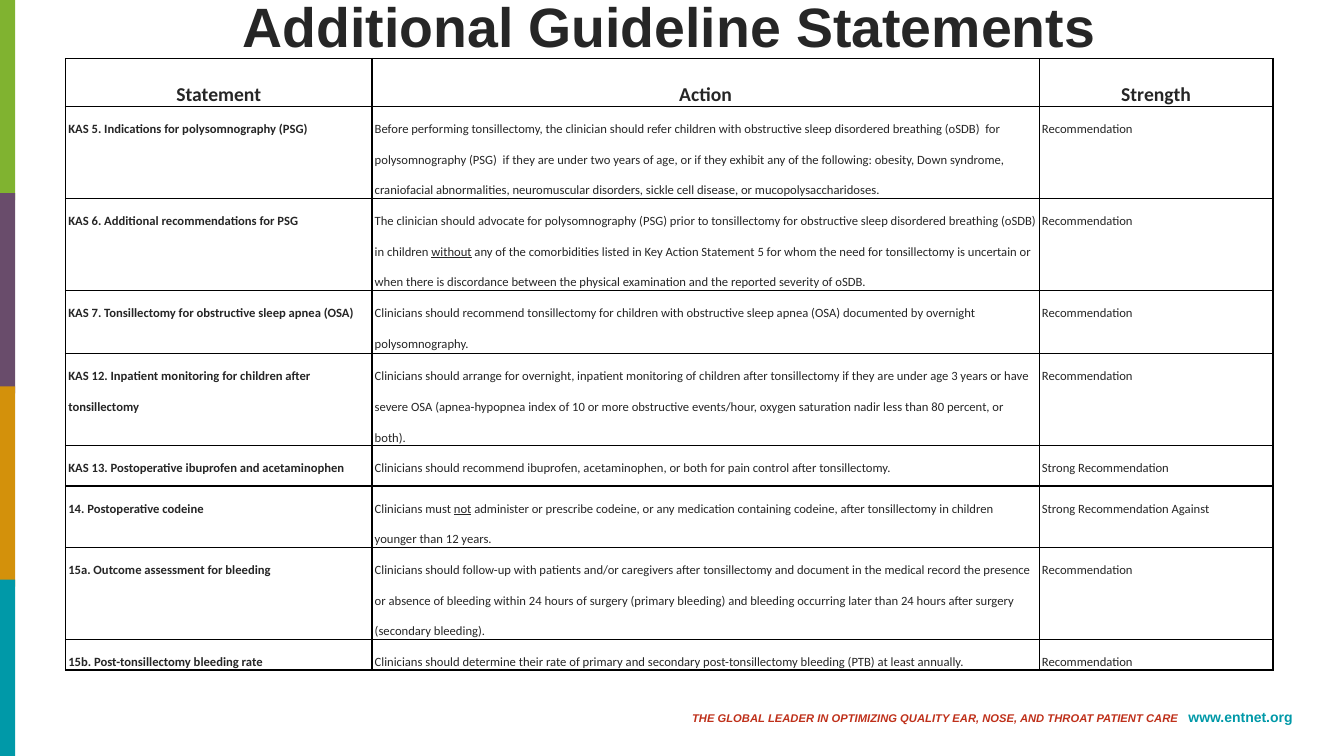
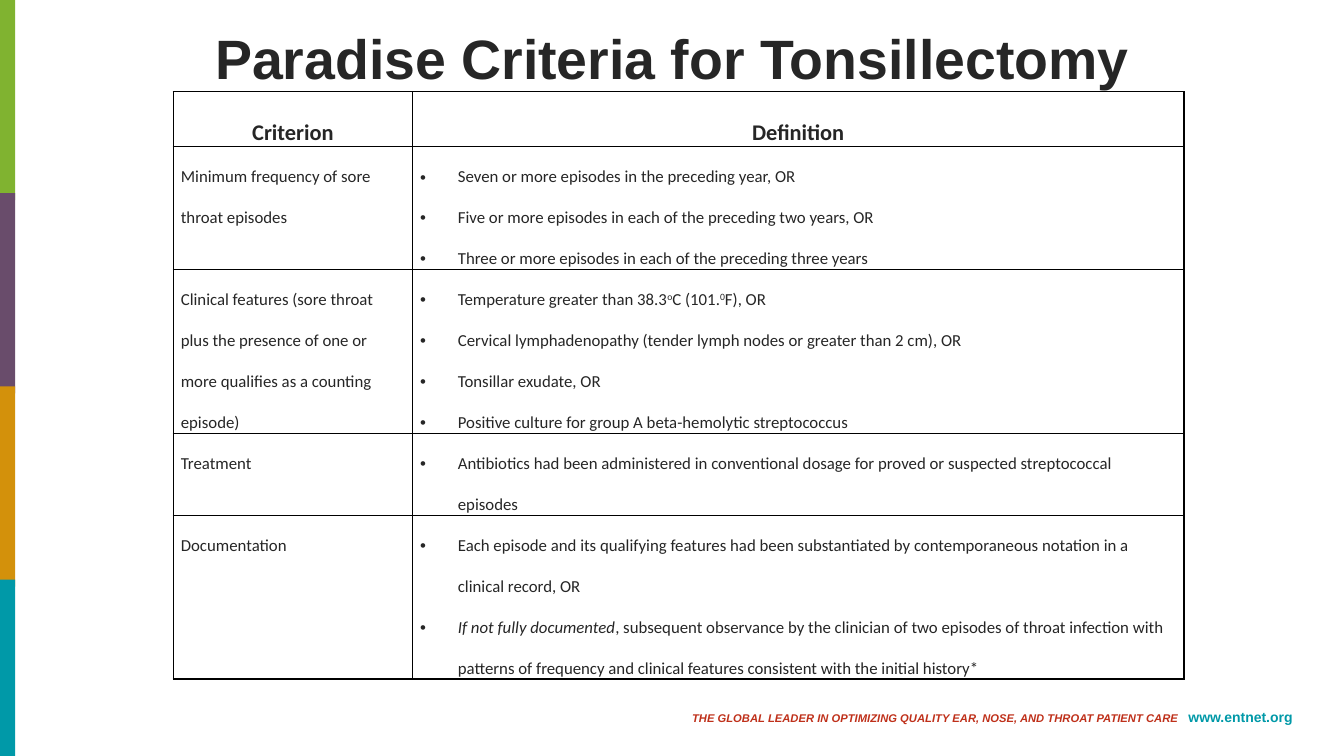
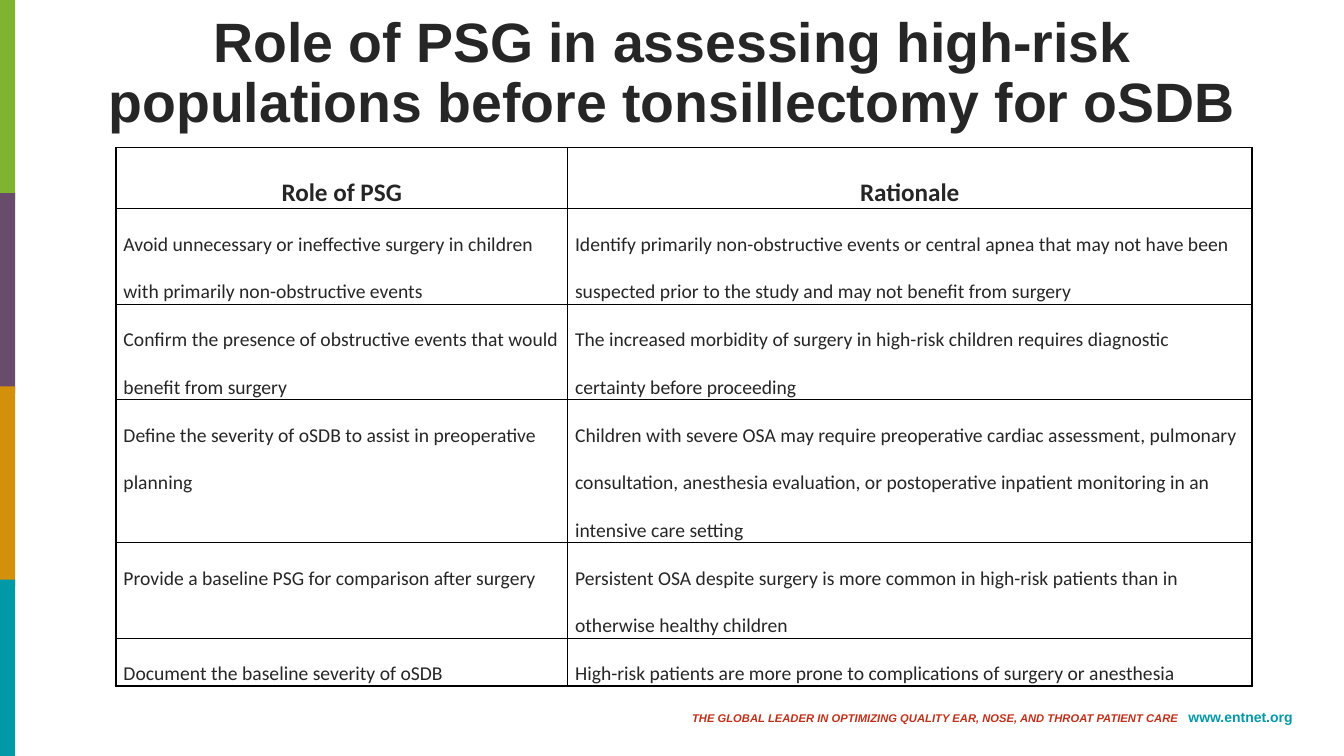
from collections import namedtuple

from lxml.etree import SubElement
from pptx import Presentation
from pptx.dml.color import RGBColor
from pptx.enum.shapes import MSO_SHAPE as Preset
from pptx.enum.text import MSO_ANCHOR as Anchor, MSO_AUTO_SIZE as AutoSize, PP_ALIGN as Align
from pptx.oxml.ns import qn
from pptx.util import Pt

INK = RGBColor(0x26, 0x26, 0x26)
GREEN = RGBColor(0x80, 0xB3, 0x30)
PURPLE = RGBColor(0x69, 0x4C, 0x6B)
OCHRE = RGBColor(0xD3, 0x91, 0x0B)
TEAL = RGBColor(0x00, 0x99, 0xA8)
RED = RGBColor(0xBF, 0x30, 0x1A)
BLACK = RGBColor(0, 0, 0)

HEADING_FONT, TABLE_FONT = "Arial", "Calibri"
SLIDE_WIDTH, SLIDE_HEIGHT = 960, 540
BAND_STEP, BAND_HEIGHT, BAND_WIDTH = 138, 143, 10.8
BULLET_INDENT = 27

# A stretch of text with one kind of emphasis
Styled = namedtuple("Styled", "text kind")


class Deck:
    """Holds the shared style and the current slide."""

    def __init__(self):
        self.presentation = Presentation()
        self.presentation.slide_width = Pt(SLIDE_WIDTH)
        self.presentation.slide_height = Pt(SLIDE_HEIGHT)
        self.layout = self.presentation.slide_layouts[5]
        self.slide = None

    def add_slide(self, title, left, top, width, height):
        first = self.slide is None
        self.slide = self.presentation.slides.add_slide(self.layout)
        if first:
            self.decorate_layout()
        self.title(title, left, top, width, height)

    def decorate_layout(self):
        # Bands and footer are drawn once, then moved to the layout
        decorations = [self.band(index, color)
                       for index, color in enumerate((GREEN, PURPLE, OCHRE, TEAL))]
        decorations.append(self.footer())
        for shape in decorations:
            self.layout.shapes.element.append(shape.element)

    def band(self, index, color):
        top = index * BAND_STEP
        height = min(BAND_HEIGHT, SLIDE_HEIGHT - top)
        shape = self.slide.shapes.add_shape(
            Preset.RECTANGLE, 0, Pt(top), Pt(BAND_WIDTH), Pt(height))
        shape.shadow.inherit = False
        shape.fill.solid()
        shape.fill.fore_color.rgb = color
        shape.line.fill.background()
        return shape

    def footer(self):
        box = self.slide.shapes.add_textbox(Pt(376.6), Pt(502.6), Pt(553.7), Pt(19.4))
        box.text_frame.word_wrap = True
        paragraph = box.text_frame.paragraphs[0]
        paragraph.alignment = Align.RIGHT
        tagline = "THE GLOBAL LEADER IN OPTIMIZING QUALITY EAR, NOSE, AND THROAT PATIENT CARE"
        for text, size, color, italic in ((tagline, 8, RED, True),
                                          (" ", 8, RED, True),
                                          ("www.entnet.org", 10, TEAL, False)):
            run = paragraph.add_run()
            run.text = text
            self.format_run(run, HEADING_FONT, size, color, True)
            run.font.italic = italic
        # Letter spacing widens the gap before the address
        paragraph.runs[1].font._element.set("spc", "450")
        return box

    def title(self, text, left, top, width, height):
        shape = self.slide.shapes.title
        shape.left, shape.top = Pt(left), Pt(top)
        shape.width, shape.height = Pt(width), Pt(height)
        frame = shape.text_frame
        frame.text = text
        frame.word_wrap = True
        frame.auto_size = AutoSize.NONE
        frame.vertical_anchor = Anchor.MIDDLE
        paragraph = frame.paragraphs[0]
        paragraph.alignment = Align.CENTER
        paragraph.line_spacing = 0.9
        self.format_run(paragraph.runs[0], HEADING_FONT, 39.6, INK, True)

    def table(self, left, top, widths, heights, rows, header_size, body_size,
              inset, bold_first=False):
        frame = self.slide.shapes.add_table(
            len(rows), len(widths), Pt(left), Pt(top), Pt(sum(widths)), Pt(sum(heights)))
        table = frame.table
        table.first_row = table.horz_banding = False
        for column, width in zip(table.columns, widths):
            column.width = Pt(width)
        for row, height in zip(table.rows, heights):
            row.height = Pt(height)
        for row_index, row in enumerate(rows):
            header = row_index == 0
            size = header_size if header else body_size
            for column_index, content in enumerate(row):
                bold = header or (bold_first and column_index == 0)
                cell = table.cell(row_index, column_index)
                self.cell(cell, content, size, bold, header, inset)

    def cell(self, cell, content, size, bold, centered, inset):
        cell.margin_left = cell.margin_right = Pt(inset)
        cell.margin_top = cell.margin_bottom = 0
        cell.vertical_anchor = Anchor.TOP
        self.borders(cell)
        cell.fill.background()
        # A list becomes bullets; a string or tuple is one plain paragraph
        bulleted = isinstance(content, list)
        frame = cell.text_frame
        for index, pieces in enumerate(content if bulleted else [content]):
            paragraph = frame.add_paragraph() if index else frame.paragraphs[0]
            paragraph.alignment = Align.CENTER if centered else Align.LEFT
            paragraph.line_spacing = 2.0
            if bulleted:
                self.bullet(paragraph)
            self.add_pieces(paragraph, pieces, size, bold)

    def add_pieces(self, paragraph, pieces, size, bold):
        for piece in [pieces] if isinstance(pieces, str) else pieces:
            text, kind = (piece, None) if isinstance(piece, str) else piece
            run = paragraph.add_run()
            run.text = text
            self.format_run(run, TABLE_FONT, size, INK, bold)
            if kind == "underline":
                run.font.underline = True
            elif kind == "italic":
                run.font.italic = True
            elif kind == "superscript":
                run.font._element.set("baseline", "30000")

    @staticmethod
    def format_run(run, font, size, color, bold):
        run.font.name = font
        run.font.size = Pt(size)
        run.font.color.rgb = color
        run.font.bold = bold

    @staticmethod
    def bullet(paragraph):
        properties = paragraph._p.get_or_add_pPr()
        properties.set("marL", str(Pt(BULLET_INDENT)))
        properties.set("indent", str(-Pt(BULLET_INDENT)))
        SubElement(properties, qn("a:buFont"), typeface="Arial")
        SubElement(properties, qn("a:buChar"), char="•")

    @staticmethod
    def borders(cell):
        properties = cell._tc.get_or_add_tcPr()
        for side in ("a:lnL", "a:lnR", "a:lnT", "a:lnB"):
            line = SubElement(properties, qn(side), w=str(Pt(1)))
            fill = SubElement(line, qn("a:solidFill"))
            SubElement(fill, qn("a:srgbClr"), val=str(BLACK))


STATEMENTS = [
    ("Statement", "Action", "Strength"),
    ("KAS 5. Indications for polysomnography (PSG)",
     "Before performing tonsillectomy, the clinician should refer children with obstructive "
     "sleep disordered breathing (oSDB)  for polysomnography (PSG)  if they are under two years "
     "of age, or if they exhibit any of the following: obesity, Down syndrome, craniofacial "
     "abnormalities, neuromuscular disorders, sickle cell disease, or mucopolysaccharidoses.",
     "Recommendation"),
    ("KAS 6. Additional recommendations for PSG",
     ("The clinician should advocate for polysomnography (PSG) prior to tonsillectomy for "
      "obstructive sleep disordered breathing (oSDB) in children ",
      Styled("without", "underline"),
      " any of the comorbidities listed in Key Action Statement 5 for whom the need for "
      "tonsillectomy is uncertain or when there is discordance between the physical "
      "examination and the reported severity of oSDB."),
     "Recommendation"),
    ("KAS 7. Tonsillectomy for obstructive sleep apnea (OSA)",
     "Clinicians should recommend tonsillectomy for children with obstructive sleep apnea (OSA) "
     "documented by overnight polysomnography.",
     "Recommendation"),
    ("KAS 12. Inpatient monitoring for children after tonsillectomy",
     "Clinicians should arrange for overnight, inpatient monitoring of children after "
     "tonsillectomy if they are under age 3 years or have severe OSA (apnea-hypopnea index of "
     "10 or more obstructive events/hour, oxygen saturation nadir less than 80 percent, or both).",
     "Recommendation"),
    ("KAS 13. Postoperative ibuprofen and acetaminophen",
     "Clinicians should recommend ibuprofen, acetaminophen, or both for pain control after "
     "tonsillectomy.",
     "Strong Recommendation"),
    ("14. Postoperative codeine",
     ("Clinicians must ", Styled("not", "underline"),
      " administer or prescribe codeine, or any medication containing codeine, after "
      "tonsillectomy in children younger than 12 years."),
     "Strong Recommendation Against"),
    ("15a. Outcome assessment for bleeding",
     "Clinicians should follow-up with patients and/or caregivers after tonsillectomy and "
     "document in the medical record the presence or absence of bleeding within 24 hours of "
     "surgery (primary bleeding) and bleeding occurring later than 24 hours after surgery "
     "(secondary bleeding).",
     "Recommendation"),
    ("15b. Post-tonsillectomy bleeding rate",
     "Clinicians should determine their rate of primary and secondary post-tonsillectomy "
     "bleeding (PTB) at least annually.",
     "Recommendation"),
]

CRITERIA = [
    ("Criterion", "Definition"),
    ("Minimum frequency of sore throat episodes",
     ["Seven or more episodes in the preceding year, OR",
      "Five or more episodes in each of the preceding two years, OR",
      "Three or more episodes in each of the preceding three years"]),
    ("Clinical features (sore throat plus the presence of one or more qualifies as a "
     "counting episode)",
     [("Temperature greater than 38.3", Styled("o", "superscript"), "C (101.",
       Styled("0", "superscript"), "F), OR"),
      "Cervical lymphadenopathy (tender lymph nodes or greater than 2 cm), OR",
      "Tonsillar exudate, OR",
      "Positive culture for group A beta-hemolytic streptococcus"]),
    ("Treatment",
     ["Antibiotics had been administered in conventional dosage for proved or suspected "
      "streptococcal episodes"]),
    ("Documentation",
     ["Each episode and its qualifying features had been substantiated by contemporaneous "
      "notation in a clinical record, OR",
      (Styled("If not fully documented", "italic"),
       ", subsequent observance by the clinician of two episodes of throat infection with "
       "patterns of frequency and clinical features consistent with the initial history*")]),
]

PSG_ROLES = [
    ("Role of PSG", "Rationale"),
    ("Avoid unnecessary or ineffective surgery in children with primarily non-obstructive events",
     "Identify primarily non-obstructive events or central apnea that may not have been "
     "suspected prior to the study and may not benefit from surgery"),
    ("Confirm the presence of obstructive events that would benefit from surgery",
     "The increased morbidity of surgery in high-risk children requires diagnostic certainty "
     "before proceeding"),
    ("Define the severity of oSDB to assist in preoperative planning",
     "Children with severe OSA may require preoperative cardiac assessment, pulmonary "
     "consultation, anesthesia evaluation, or postoperative inpatient monitoring in an "
     "intensive care setting"),
    ("Provide a baseline PSG for comparison after surgery",
     "Persistent OSA despite surgery is more common in high-risk patients than in otherwise "
     "healthy children"),
    ("Document the baseline severity of oSDB",
     "High-risk patients are more prone to complications of surgery or anesthesia"),
]


def main():
    deck = Deck()

    # Guideline statements
    deck.add_slide("Additional Guideline Statements", 68.4, 12.2, 819.4, 17.3)
    deck.table(46.8, 41.8, (218.9, 476.6, 167), (26.6, 59, 63.4, 45.4, 57.6, 28.8, 37.4, 57.6, 13),
               STATEMENTS, header_size=14, body_size=9, inset=2, bold_first=True)

    # Paradise criteria
    deck.add_slide("Paradise Criteria for Tonsillectomy", 66.2, 28.8, 828, 30.2)
    deck.table(123.8, 65.5, (170.9, 551), (31, 77.8, 104.4, 50.4, 104.4),
               CRITERIA, header_size=16, body_size=12, inset=5.4)

    # Role of polysomnography
    deck.add_slide("Role of PSG in assessing high-risk populations before tonsillectomy for oSDB",
                   66.2, 28.8, 828, 49)
    deck.table(82.8, 105.1, (322.6, 488.9), (34.6, 58.3, 58.3, 89.3, 58.3, 31),
               PSG_ROLES, header_size=18, body_size=14, inset=5.4)

    deck.presentation.save("out.pptx")


if __name__ == "__main__":
    main()
